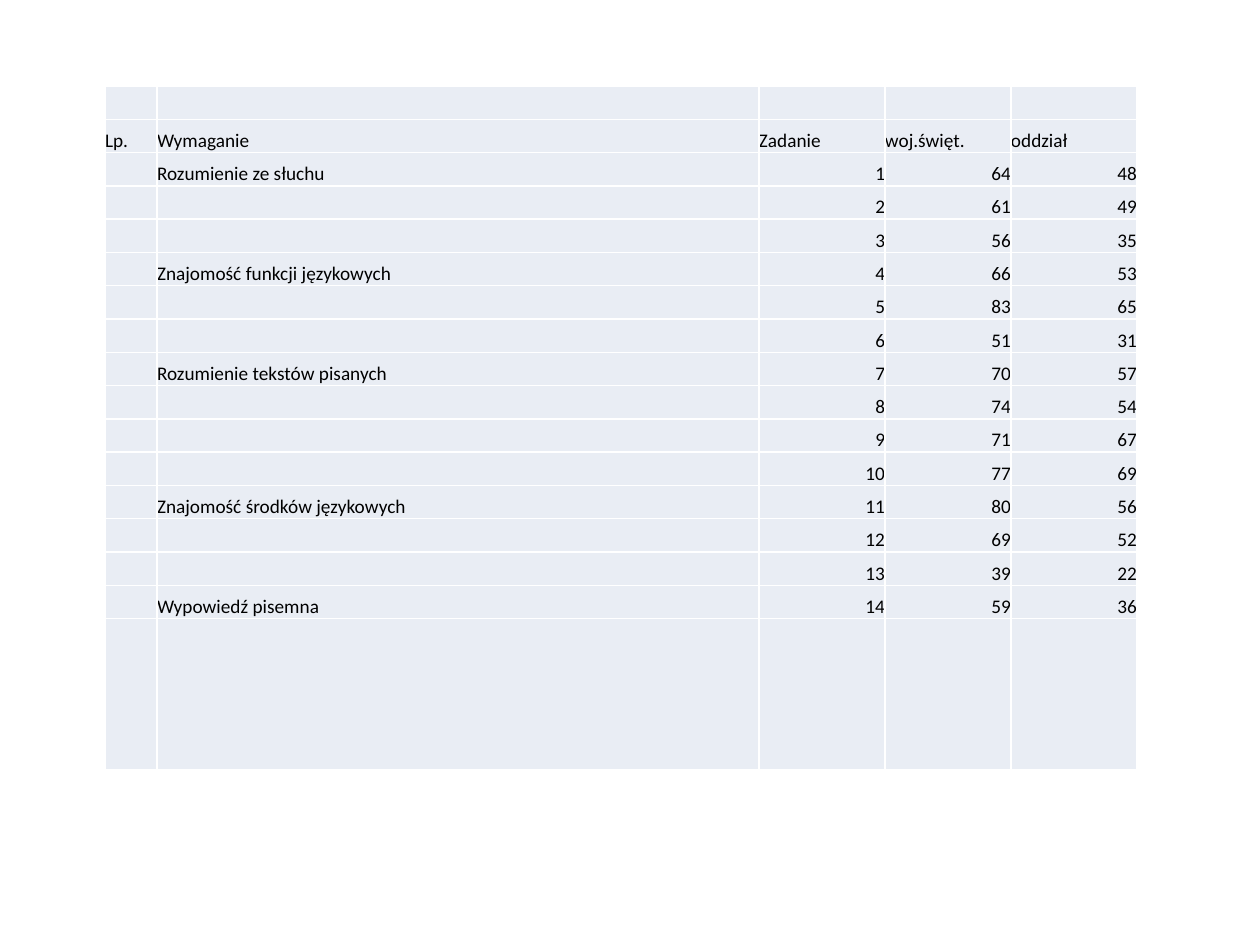
from dataclasses import dataclass

from lxml.etree import SubElement
from pptx import Presentation
from pptx.dml.color import RGBColor as Color
from pptx.enum.text import MSO_ANCHOR as Anchor, PP_ALIGN as Align
from pptx.oxml.ns import qn
from pptx.util import Pt

PX = 914400 / 126


@dataclass(frozen=True)
class Theme:
    """Colours and type sizes of the deck."""
    font: str = "Calibri"
    size: int = 11
    ink: str = "000000"
    cell: str = "E9EDF4"
    border: str = "FFFFFF"
    border_width: int = 1


THEME = Theme()
COLUMNS = (52, 602, 126, 126, 126)
LAST_ROW = 151
HEADINGS = ("Lp.", "Wymaganie", "Zadanie", "woj.święt.", "oddział")
REQUIREMENTS = (
    ("Rozumienie ze słuchu", ((64, 48), (61, 49), (56, 35))),
    ("Znajomość funkcji językowych", ((66, 53), (83, 65), (51, 31))),
    ("Rozumienie tekstów pisanych", ((70, 57), (74, 54), (71, 67), (77, 69))),
    ("Znajomość środków językowych", ((80, 56), (69, 52), (39, 22))),
    ("Wypowiedź pisemna", ((59, 36),)),
)


def emu(px):
    """Turn pixels into EMU."""
    return round(px * PX)


def result_rows():
    """List the table rows, with tasks numbered through all requirements."""
    blank = ("",) * len(COLUMNS)
    rows = [blank, HEADINGS]
    task = 0
    for requirement, scores in REQUIREMENTS:
        for index, (region, group) in enumerate(scores):
            task += 1
            rows.append(("", "" if index else requirement, task, region, group))
    return rows + [blank]


def write_text(frame, text, size=THEME.size, color=THEME.ink, align=Align.LEFT):
    """Write one formatted paragraph, keeping its size even when empty."""
    para = frame.paragraphs[0]
    para.alignment = align
    if text == "":
        para._p.get_or_add_endParaRPr().set("sz", str(size * 100))
        return
    span = para.add_run()
    span.text = str(text)
    span.font.name = THEME.font
    span.font.size = Pt(size)
    span.font.color.rgb = Color.from_string(color)


def draw_borders(cell):
    """Give a cell a thin line on each side."""
    properties = cell._tc.get_or_add_tcPr()
    for index, side in enumerate(("lnL", "lnR", "lnT", "lnB")):
        line = SubElement(properties, qn(f"a:{side}"), w=str(Pt(THEME.border_width)))
        fill = SubElement(line, qn("a:solidFill"))
        SubElement(fill, qn("a:srgbClr"), val=THEME.border)
        properties.insert(index, line)


def format_cell(cell, value):
    """Fill a cell and set its value, numbers to the right."""
    cell.margin_left = cell.margin_right = cell.margin_top = cell.margin_bottom = 0
    cell.vertical_anchor = Anchor.BOTTOM
    cell.fill.solid()
    cell.fill.fore_color.rgb = Color.from_string(THEME.cell)
    draw_borders(cell)
    align = Align.RIGHT if isinstance(value, int) else Align.LEFT
    write_text(cell.text_frame, value, align=align)


def add_results_table(page, left, top, width, height):
    """Place the table of results in the given box."""
    rows = result_rows()
    box = page.shapes.add_table(len(rows), len(COLUMNS), emu(left), emu(top),
                                emu(width), emu(height))
    table = box.table
    table.first_row = table.horz_banding = False
    for column, column_width in zip(table.columns, COLUMNS):
        column.width = emu(column_width)
    row_height = (height - LAST_ROW) / (len(rows) - 1)
    for row, values in zip(table.rows, rows):
        row.height = emu(row_height)
        for cell, value in zip(row.cells, values):
            format_cell(cell, value)
    table.rows[len(rows) - 1].height = emu(LAST_ROW)


def main():
    """Build the deck and save it."""
    deck = Presentation()
    deck.slide_width, deck.slide_height = emu(1260), emu(945)
    page = deck.slides.add_slide(deck.slide_layouts[6])
    add_results_table(page, 105, 86, sum(COLUMNS), 684)
    deck.save("out.pptx")


if __name__ == "__main__":
    main()
